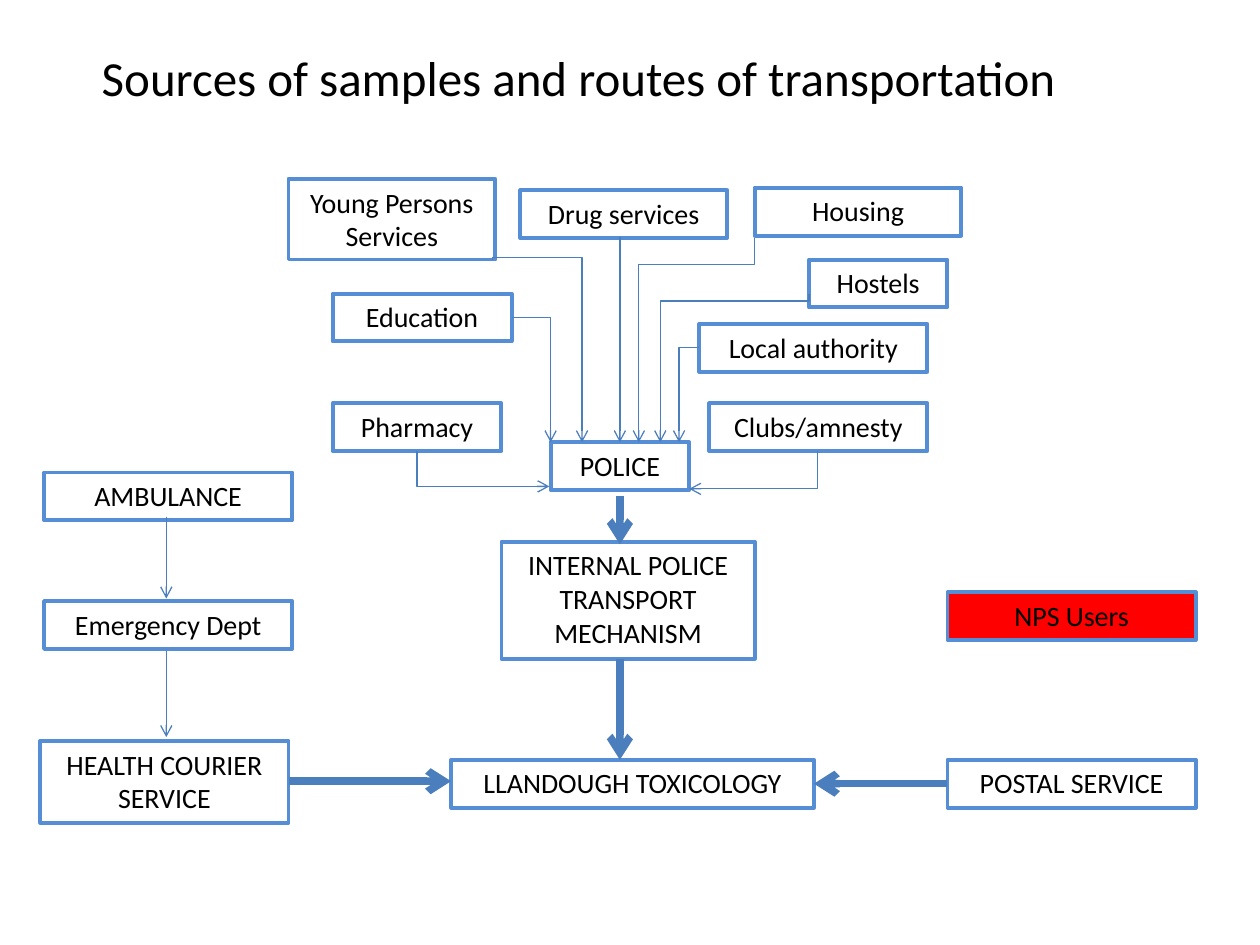
from lxml import etree
from pptx import Presentation
from pptx import util as u
from pptx.dml.color import RGBColor
from pptx.enum import shapes, text
from pptx.oxml import ns


def color(value):
    return RGBColor.from_string(value)


class Diagram:
    FONT = "Calibri"
    BLACK, BORDER, ARROW, RED = "000000", "558ED5", "4B7EBC", "FF0000"
    THIN, THICK = 0.75, 4.25

    def __init__(self, slide):
        self.s = slide

    def label(self, tf, lines, size, **frame):
        tf.word_wrap = True
        for name, value in frame.items():
            setattr(tf, name, value)
        for i, line in enumerate(lines.split("\n")):
            p = tf.paragraphs[0] if i == 0 else tf.add_paragraph()
            p.alignment = text.PP_ALIGN.CENTER
            r = p.add_run()
            r.text = line
            style = {"name": self.FONT, "size": u.Pt(size)}
            for name, value in style.items():
                setattr(r.font, name, value)
            r.font.color.rgb = color(self.BLACK)

    def title(self, words, x, y, w, h):
        sp = self.s.shapes.add_textbox(*map(u.Inches, (x, y, w, h)))
        self.label(sp.text_frame, words, 28, margin_top=u.Inches(0.08),
                   vertical_anchor=text.MSO_ANCHOR.TOP)

    def box(self, words, x, y, w, h=0.38, fill=None):
        sp = self.s.shapes.add_shape(shapes.MSO_SHAPE.RECTANGLE,
                                     *map(u.Inches, (x, y, w, h)))
        sp.shadow.inherit = False
        if fill:
            sp.fill.solid()
            sp.fill.fore_color.rgb = color(fill)
        else:
            sp.fill.background()
        sp.line.color.rgb = color(self.BORDER)
        sp.line.width = u.Pt(2.25)
        self.label(sp.text_frame, words, 16,
                   auto_size=text.MSO_AUTO_SIZE.SHAPE_TO_FIT_TEXT,
                   vertical_anchor=text.MSO_ANCHOR.TOP)

    def arrow(self, x1, y1, x2, y2, width=THIN, kind=shapes.MSO_CONNECTOR.STRAIGHT):
        c = self.s.shapes.add_connector(kind, *map(u.Inches, (x1, y1, x2, y2)))
        c.line.color.rgb = color(self.ARROW)
        c.line.width = u.Pt(width)
        spPr = c._element.spPr
        etree.SubElement(spPr.find(ns.qn("a:ln")), ns.qn("a:tailEnd"), type="arrow")
        etree.SubElement(spPr, ns.qn("a:effectLst"))
        return c

    def elbow(self, x1, y1, x2, y2, down_first=True, bend=None):
        """Draw a bent arrow; bend is the share of the drop before the middle leg."""
        if down_first:
            # A quarter turn about the centre makes the first leg vertical.
            cx, cy = (x1 + x2) / 2, (y1 + y2) / 2
            dx, dy = (x1 - x2) / 2, (y2 - y1) / 2
            x1, y1, x2, y2 = cx - dy, cy - dx, cx + dy, cy + dx
        c = self.arrow(x1, y1, x2, y2, kind=shapes.MSO_CONNECTOR.ELBOW)
        spPr = c._element.spPr
        if down_first:
            spPr.find(ns.qn("a:xfrm")).set("rot", str(90 * 60000))
        geom = spPr.find(ns.qn("a:prstGeom"))
        if bend is None:
            geom.set("prst", "bentConnector2")
        else:
            guides = geom.find(ns.qn("a:avLst"))
            if guides is None:
                guides = etree.SubElement(geom, ns.qn("a:avLst"))
            etree.SubElement(guides, ns.qn("a:gd"), name="adj1",
                             fmla=f"val {round(bend * 100000)}")


def main():
    prs = Presentation()
    prs.slide_width, prs.slide_height = u.Inches(10), u.Inches(7.5)
    d = Diagram(prs.slides.add_slide(prs.slide_layouts[6]))

    d.title("Sources of samples and routes of transportation", 0.5, 0.3, 8.18, 0.93)

    axis, care_axis, side = 4.92, 1.32, 1.97
    police_top = 3.51
    boxes = [
        ("Young Persons\nServices", 2.29, 1.42, 1.64, 0.64),
        ("Drug services", 4.13, 1.51, 1.64),
        ("Housing", 5.99, 1.49, 1.64),
        ("Hostels", 6.42, 2.06, 1.1),
        ("Education", 2.64, 2.33, 1.42),
        ("Local authority", 5.55, 2.57, 1.81),
        ("Pharmacy", 2.64, 3.2, 1.34),
        ("Clubs/amnesty", 5.63, 3.2, 1.73),
        ("POLICE", 4.37, police_top, 1.1),
        ("INTERNAL POLICE TRANSPORT MECHANISM", 3.98, 4.3, 2.01, 0.93),
        ("LLANDOUGH TOXICOLOGY", 3.58, 6.03, 2.88),
        ("AMBULANCE", 0.35, 3.75, side),
        ("Emergency Dept", 0.35, 4.77, side),
        ("HEALTH COURIER SERVICE", 0.32, 5.88, side, 0.65),
        ("POSTAL SERVICE", 7.52, 6.03, side),
        ("NPS Users", 7.52, 4.7, side, 0.38, d.RED),
    ]
    for box in boxes:
        d.box(*box)

    # Sources to police
    d.arrow(axis, 1.88, axis, police_top)
    d.elbow(3.91, 2.06, 4.62, police_top, bend=-0.01)
    d.elbow(5.99, 1.89, 5.07, police_top, bend=0.13)
    d.elbow(6.42, 2.33, 5.24, police_top, bend=0.05)
    d.elbow(4.06, 2.52, 4.37, police_top, down_first=False)
    d.elbow(5.55, 2.76, 5.39, police_top, down_first=False)
    d.elbow(3.31, 3.58, 4.36, 3.86)
    d.elbow(6.49, 3.58, 5.47, 3.88)

    # Ambulance to courier
    d.arrow(care_axis, 4.1, care_axis, 4.75)
    d.arrow(care_axis, 5.17, care_axis, 5.85)

    # Main routes to the laboratory
    d.arrow(axis, 3.94, axis, 4.32, d.THICK)
    d.arrow(axis, 5.23, axis, 6.03, d.THICK)
    d.arrow(2.29, 6.2, 3.58, 6.2, d.THICK)
    d.arrow(7.52, 6.22, 6.46, 6.22, d.THICK)

    prs.save("out.pptx")


if __name__ == "__main__":
    main()
